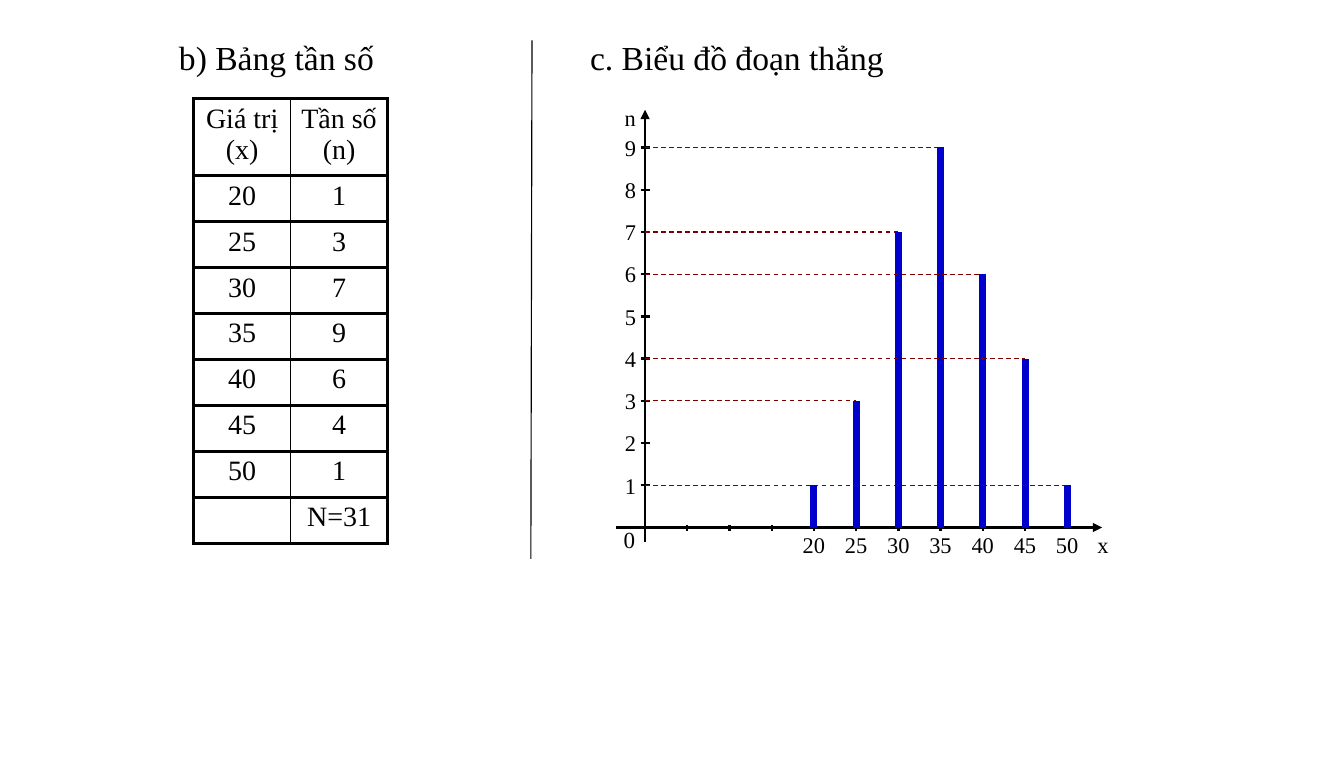
import lxml.etree
import pptx
import pptx.dml.color
import pptx.enum.dml
import pptx.enum.shapes
import pptx.enum.text
import pptx.oxml
import pptx.oxml.ns
import pptx.util

Inches = pptx.util.Inches
COLORS = {"ink": "000000", "bar": "0000CC", "guide": "800000"}
FREQUENCIES = {20: 1, 25: 3, 30: 7, 35: 9, 40: 6, 45: 4, 50: 1}

ORIGIN_X, ORIGIN_Y = 5.76, 4.71
UNIT = 0.377  # inches per step on both axes
VALUE_STEP = 5


class SlideBuilder:
    def __init__(self, slide):
        self.slide = slide
        self.font = "Times New Roman"

    def color(self, name):
        return pptx.dml.color.RGBColor.from_string(COLORS[name])

    def format_runs(self, para, size):
        for span in para.runs:
            span.font.name = self.font
            span.font.size = pptx.util.Pt(size)
            span.font.color.rgb = self.color("ink")

    def text(self, words, left, top, width, height=0.34, size=14.4):
        box = self.slide.shapes.add_textbox(
            Inches(left), Inches(top), Inches(width), Inches(height))
        frame = box.text_frame
        frame.word_wrap = False
        frame.auto_size = pptx.enum.text.MSO_AUTO_SIZE.SHAPE_TO_FIT_TEXT
        frame.text = words
        self.format_runs(frame.paragraphs[0], size)

    def line(self, x1, y1, x2, y2, width=1.5, color="ink", dashed=False, arrow=False):
        line = self.slide.shapes.add_connector(
            pptx.enum.shapes.MSO_CONNECTOR.STRAIGHT,
            Inches(x1), Inches(y1), Inches(x2), Inches(y2))
        line.line.width = pptx.util.Pt(width)
        line.line.color.rgb = self.color(color)
        if dashed:
            line.line.dash_style = pptx.enum.dml.MSO_LINE.DASH
        properties = line._element.spPr
        if arrow:
            outline = properties.find(pptx.oxml.ns.qn("a:ln"))
            lxml.etree.SubElement(outline, pptx.oxml.ns.qn("a:tailEnd"), type="triangle")
        lxml.etree.SubElement(properties, pptx.oxml.ns.qn("a:effectLst"))

    def border(self, cell, side, width):
        cell._tc.get_or_add_tcPr().append(pptx.oxml.parse_xml(
            f'<a:ln{side} {pptx.oxml.ns.nsdecls("a")} w="{pptx.util.Pt(width)}">'
            f'<a:solidFill><a:srgbClr val="{COLORS["ink"]}"/></a:solidFill></a:ln{side}>'))

    def table(self, rows, left, top, width, header_height, row_height):
        """Add a two-column table with thick rules and a thin column divider."""
        height = header_height + row_height * (len(rows) - 1)
        table = self.slide.shapes.add_table(
            len(rows), 2, Inches(left), Inches(top), Inches(width), Inches(height)).table
        table.first_row = table.horz_banding = False
        for r, words in enumerate(rows):
            table.rows[r].height = Inches(row_height if r else header_height)
            for c, word in enumerate(words):
                cell = table.cell(r, c)
                cell.margin_left = cell.margin_right = Inches(0.08)
                cell.margin_top = cell.margin_bottom = Inches(0.04)
                cell.text = word
                para = cell.text_frame.paragraphs[0]
                para.alignment = pptx.enum.text.PP_ALIGN.CENTER
                self.format_runs(para, 18)
                widths = {"L": 1 if c else 2.25, "R": 2.25 if c else 1, "T": 2.25, "B": 2.25}
                for side, border_width in widths.items():
                    self.border(cell, side, border_width)
                cell.fill.background()

    def axes(self):
        self.line(5.5, ORIGIN_Y, 9.84, ORIGIN_Y, arrow=True)
        self.line(ORIGIN_X, 4.84, ORIGIN_X, 0.98, arrow=True)
        for step in range(1, 10):
            x, y = ORIGIN_X + step * UNIT, ORIGIN_Y - step * UNIT
            self.line(ORIGIN_X - 0.04, y, ORIGIN_X + 0.04, y)
            self.line(x, ORIGIN_Y - 0.02, x, ORIGIN_Y + 0.03)
            self.text(str(step), 5.48, y - 0.17, 0.31)
        self.text("0", 5.47, 4.64, 0.31, 0.35, 14.8)
        self.text("n", 5.48, 0.88, 0.3)
        self.text("x", 9.7, 4.69, 0.31)

    def segments(self, frequencies):
        """Draw a bar per value and one guide per frequency, to its farthest bar."""
        reach = {count: value for value, count in frequencies.items()}
        for value, count in frequencies.items():
            x = ORIGIN_X + value / VALUE_STEP * UNIT
            y = ORIGIN_Y - count * UNIT
            if count in reach:
                guide_end = ORIGIN_X + reach.pop(count) / VALUE_STEP * UNIT
                self.line(ORIGIN_X, y, guide_end, y, 0.75, "guide", dashed=True)
            self.line(x, ORIGIN_Y, x, y, 4.5, "bar")
            self.text(str(value), x - 0.2, 4.69, 0.41)


def main():
    deck = pptx.Presentation()
    deck.slide_width, deck.slide_height = Inches(12), Inches(7)
    page = SlideBuilder(deck.slides.add_slide(deck.slide_layouts[6]))

    rows = [("Giá trị (x)", "Tần số (n)")]
    rows += [(str(value), str(count)) for value, count in FREQUENCIES.items()]
    rows.append(("", f"N={sum(FREQUENCIES.values())}"))
    page.table(rows, 1.73, 0.88, 1.73, 0.69, 0.41)

    page.text("b) Bảng tần số", 1.5, 0.28, 1.96, 0.46, 21.6)
    page.line(4.75, 0.36, 4.74, 4.99, 0.75)
    page.text("c. Biểu đồ đoạn thẳng", 5.17, 0.28, 2.85, 0.46, 21.6)
    page.axes()
    page.segments(FREQUENCIES)
    deck.save("out.pptx")


if __name__ == "__main__":
    main()
